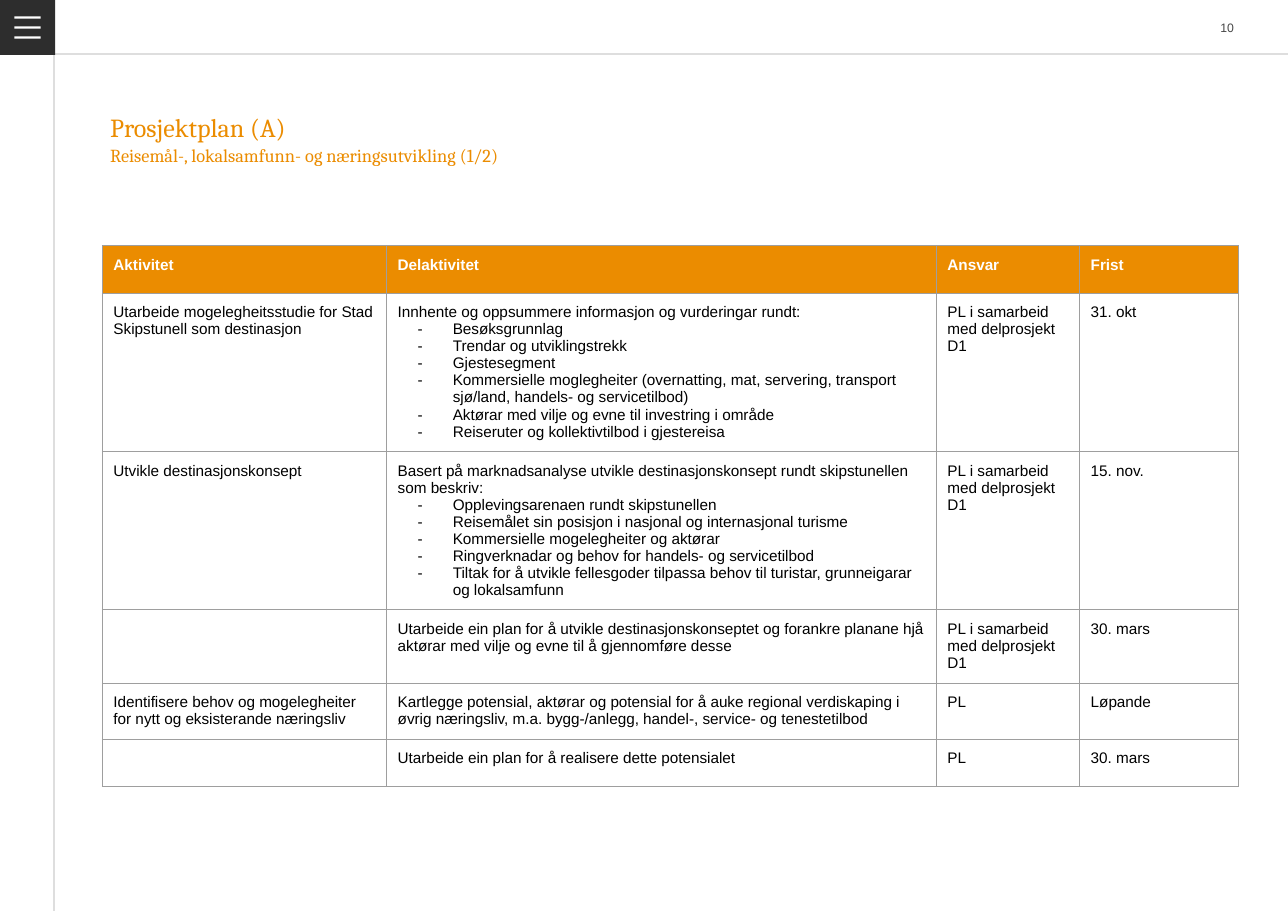
from lxml.etree import SubElement as Sub
from pptx import Presentation
from pptx.dml.color import RGBColor
from pptx.enum.shapes import MSO_CONNECTOR as Conn, MSO_SHAPE as Shape
from pptx.enum.text import MSO_ANCHOR as Anchor, MSO_AUTO_SIZE as Auto, PP_ALIGN as Align
from pptx.oxml.ns import qn
from pptx.util import Inches, Pt


def paint(color, code):
    color.rgb = RGBColor.from_string(code)


def style(par, size, code, face="Arial", bold=False):
    for run in par.runs:
        run.font.size = Pt(size)
        run.font.name = face
        run.font.bold = bold
        paint(run.font.color, code)


prs = Presentation()
prs.slide_width, prs.slide_height = Inches(11.69), Inches(8.27)
slide = prs.slides.add_slide(prs.slide_layouts[5])
shapes = slide.shapes

# Frame lines
for x1, y1, x2, y2 in [(0, 0.49, 11.69, 0.49), (0.49, 0, 0.49, 8.27)]:
    line = shapes.add_connector(Conn.STRAIGHT, Inches(x1), Inches(y1), Inches(x2), Inches(y2))
    paint(line.line.color, "DEDEDE")
    line.line.width = Pt(0.75)
    Sub(line._element.spPr, qn("a:effectLst"))

# Menu button with three bars, drawn in hundredths of an inch
box = shapes.add_shape(Shape.RECTANGLE, 0, 0, Inches(0.5), Inches(0.5))
pen = shapes.build_freeform(13, 15, scale=Inches(0.01))
for top in (15, 24, 33):
    if top > 15:
        pen.move_to(13, top)
    pen.add_line_segments([(13, top + 2), (37, top + 2), (37, top)], close=True)
bars = pen.convert_to_shape()
for shape, code in [(box, "2D2D2D"), (bars, "FFFFFF")]:
    shape.shadow.inherit = False
    shape.fill.solid()
    paint(shape.fill.fore_color, code)
    shape.line.fill.background()

# Page number
page = shapes.add_textbox(Inches(10.7), 0, Inches(0.5), Inches(0.5))
frame = page.text_frame
frame.text = "10"
frame.word_wrap = True
frame.vertical_anchor = Anchor.MIDDLE
frame.margin_left = frame.margin_right = frame.margin_top = frame.margin_bottom = 0
frame.paragraphs[0].alignment = Align.RIGHT
style(frame.paragraphs[0], 8, "464646")

# Title
title = shapes.title
title.left, title.top, title.width, title.height = Inches(1), Inches(1), Inches(10.2), Inches(0.58)
frame = title.text_frame
frame.text = "Prosjektplan (A)\nReisemål-, lokalsamfunn- og næringsutvikling (1/2)"
frame.auto_size = Auto.NONE
frame.vertical_anchor = Anchor.TOP
frame.margin_left = frame.margin_right = frame.margin_top = frame.margin_bottom = 0
for par, size in zip(frame.paragraphs, (17, 12)):
    par.alignment = Align.LEFT
    par.line_spacing = 1.05
    par.space_before = Pt(0)
    style(par, size, "EB8C00", "Cambria")

# Plan: a line that starts with "- " is a list item
team = "PL i samarbeid med delprosjekt D1"
rows = [
    ("Aktivitet", "Delaktivitet", "Ansvar", "Frist"),
    ("Utarbeide mogelegheitsstudie for Stad Skipstunell som destinasjon",
     "Innhente og oppsummere informasjon og vurderingar rundt:\n"
     "- Besøksgrunnlag\n"
     "- Trendar og utviklingstrekk\n"
     "- Gjestesegment\n"
     "- Kommersielle moglegheiter (overnatting, mat, servering, transport sjø/land, "
     "handels- og servicetilbod)\n"
     "- Aktørar med vilje og evne til investring i område\n"
     "- Reiseruter og kollektivtilbod i gjestereisa",
     team, "31. okt"),
    ("Utvikle destinasjonskonsept",
     "Basert på marknadsanalyse utvikle destinasjonskonsept rundt skipstunellen som beskriv:\n"
     "- Opplevingsarenaen rundt skipstunellen\n"
     "- Reisemålet sin posisjon i nasjonal og internasjonal turisme\n"
     "- Kommersielle mogelegheiter og aktørar\n"
     "- Ringverknadar og behov for handels- og servicetilbod\n"
     "- Tiltak for å utvikle fellesgoder tilpassa behov til turistar, grunneigarar "
     "og lokalsamfunn",
     team, "15. nov."),
    ("", "Utarbeide ein plan for å utvikle destinasjonskonseptet og forankre planane hjå "
     "aktørar med vilje og evne til å gjennomføre desse", team, "30. mars"),
    ("Identifisere behov og mogelegheiter for nytt og eksisterande næringsliv",
     "Kartlegge potensial, aktørar og potensial for å auke regional verdiskaping i øvrig "
     "næringsliv, m.a. bygg-/anlegg, handel-, service- og tenestetilbod", "PL", "Løpande"),
    ("", "Utarbeide ein plan for å realisere dette potensialet", "PL", "30. mars"),
]
high = 0.43
grid = shapes.add_table(len(rows), 4, Inches(0.93), Inches(2.23),
                        Inches(10.31), Inches(high * len(rows))).table
grid.first_row = grid.horz_banding = False
for col, wide in zip(grid.columns, (2.58, 4.99, 1.3, 1.44)):
    col.width = Inches(wide)

for r, row in enumerate(rows):
    grid.rows[r].height = Inches(high)
    for c, text in enumerate(row):
        cell = grid.cell(r, c)
        cell.margin_left = cell.margin_right = Inches(0.1)
        cell.margin_top = cell.margin_bottom = Inches(0.1)

        # Borders, then fill
        props = cell._tc.get_or_add_tcPr()
        for side in ("lnL", "lnR", "lnT", "lnB"):
            edge = Sub(props, qn("a:" + side), w=str(Pt(0.75)))
            Sub(Sub(edge, qn("a:solidFill")), qn("a:srgbClr"), val="9E9E9E")
        if r == 0:
            cell.fill.solid()
            paint(cell.fill.fore_color, "EB8C00")
        else:
            cell.fill.background()

        # Text
        cell.text_frame.text = text
        for par in cell.text_frame.paragraphs:
            par.line_spacing = Pt(11.15)
            if par.text.startswith("- "):
                par.text = par.text[2:]
                form = par._p.get_or_add_pPr()
                form.set("marL", str(Inches(0.5)))
                form.set("indent", str(Inches(-0.32)))
                Sub(Sub(form, qn("a:buClr")), qn("a:srgbClr"), val="000000")
                Sub(form, qn("a:buSzPts"), val="1000")
                Sub(form, qn("a:buFont"), typeface="Arial")
                Sub(form, qn("a:buChar"), char="-")
            style(par, 10, "000000" if r else "FFFFFF", bold=r == 0)
            if not text:
                Sub(par._p, qn("a:endParaRPr"), sz="1000")

prs.save("out.pptx")
